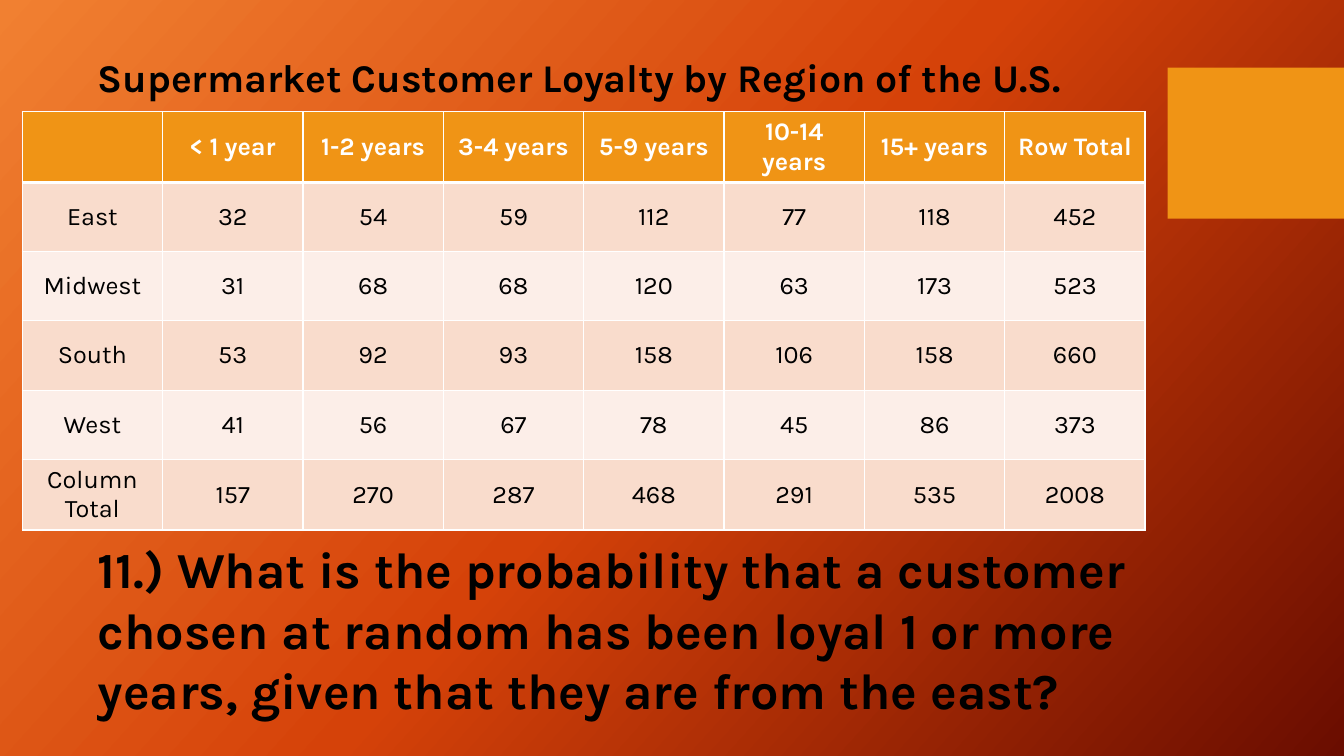
from copy import deepcopy
from dataclasses import dataclass

from lxml import etree
from pptx import Presentation
from pptx.dml.color import RGBColor
from pptx.enum import shapes, text
from pptx.oxml import ns
from pptx.slide import Slide
from pptx.table import _Cell
from pptx.text.text import _Paragraph
from pptx.util import Inches, Pt


@dataclass(frozen=True)
class Theme:
    font: str = "Karla"
    ink: str = "000000"
    white: str = "FFFFFF"
    accent: str = "F09415"
    bands: tuple[str, str] = ("F9DCCC", "FCEEE8")
    backdrop: tuple[str, str, str] = ("F18031", "D54209", "6A0D00")
    backdrop_angle: int = 42
    question_size: int = 36
    title_size: int = 28
    table_size: int = 18
    rule: int = 1
    header_rule: int = 3


@dataclass(frozen=True)
class Box:
    left: float
    top: float
    width: float
    height: float

    def emu(self) -> tuple[int, int, int, int]:
        return Inches(self.left), Inches(self.top), Inches(self.width), Inches(self.height)


@dataclass(frozen=True)
class Heading:
    words: str
    box: Box
    size: int


@dataclass(frozen=True)
class Region:
    name: str
    counts: tuple[int, ...]

    def labels(self) -> list[str]:
        return [self.name, *map(str, self.counts)]


THEME = Theme()
ACCENT_BOX = Box(11.58, 0.67, 1.75, 1.5)
LOYALTY_BOX = Box(0.22, 1.11, 11.14, 4.12)
HEADINGS = (
    Heading(
        "11.) What is the probability that a customer chosen at random has been "
        "loyal 1 or more years, given that they are from the east?",
        Box(0.87, 5.29, 11.29, 1.92),
        THEME.question_size,
    ),
    Heading(
        "Supermarket Customer Loyalty by Region of the U.S.",
        Box(0.87, 0.48, 10.39, 0.57),
        THEME.title_size,
    ),
)
PERIODS = ["", "< 1 year", "1-2 years", "3-4 years", "5-9 years",
           "10-14 years", "15+ years", "Row Total"]
REGIONS = (
    Region("East", (32, 54, 59, 112, 77, 118, 452)),
    Region("Midwest", (31, 68, 68, 120, 63, 173, 523)),
    Region("South", (53, 92, 93, 158, 106, 158, 660)),
    Region("West", (41, 56, 67, 78, 45, 86, 373)),
    Region("Column Total", (157, 270, 287, 468, 291, 535, 2008)),
)


def rgb(value: str) -> RGBColor:
    return RGBColor.from_string(value)


def add_run(paragraph: _Paragraph, words: str, size: int, color: str, bold: bool) -> None:
    run = paragraph.add_run()
    run.text = words
    run.font.name = THEME.font
    run.font.size = Pt(size)
    run.font.bold = bold
    run.font.color.rgb = rgb(color)


def paint_backdrop(slide: Slide) -> None:
    fill = slide.background.fill
    fill.gradient()
    fill.gradient_angle = 360 - THEME.backdrop_angle
    stop_list = next(slide.element.iter(ns.qn("a:gsLst")))
    stop_list.append(deepcopy(stop_list[-1]))
    for stop, color, position in zip(fill.gradient_stops, THEME.backdrop, (0, 0.5, 1)):
        stop.color.rgb = rgb(color)
        stop.position = position


def add_accent(slide: Slide) -> None:
    accent = slide.shapes.add_shape(shapes.MSO_SHAPE.RECTANGLE, *ACCENT_BOX.emu())
    accent.shadow.inherit = False
    accent.fill.solid()
    accent.fill.fore_color.rgb = rgb(THEME.accent)
    accent.line.fill.background()


def add_heading(slide: Slide, heading: Heading) -> None:
    frame = slide.shapes.add_textbox(*heading.box.emu()).text_frame
    frame.word_wrap = True
    frame.auto_size = text.MSO_AUTO_SIZE.SHAPE_TO_FIT_TEXT
    add_run(frame.paragraphs[0], heading.words, heading.size, THEME.ink, True)


def add_borders(cell: _Cell, top: int, bottom: int) -> None:
    properties = cell._tc.get_or_add_tcPr()
    widths = {"L": THEME.rule, "R": THEME.rule, "T": top, "B": bottom}
    for side, width in widths.items():
        line = etree.SubElement(properties, ns.qn(f"a:ln{side}"), w=str(Pt(width)))
        solid = etree.SubElement(line, ns.qn("a:solidFill"))
        etree.SubElement(solid, ns.qn("a:srgbClr"), val=THEME.white)


def fill_cell(cell: _Cell, words: str, row: int) -> None:
    header = row == 0
    add_borders(
        cell,
        THEME.header_rule if row == 1 else THEME.rule,
        THEME.header_rule if header else THEME.rule,
    )
    cell.fill.solid()
    cell.fill.fore_color.rgb = rgb(THEME.accent if header else THEME.bands[(row - 1) % 2])
    cell.vertical_anchor = text.MSO_ANCHOR.MIDDLE
    paragraph = cell.text_frame.paragraphs[0]
    paragraph.alignment = text.PP_ALIGN.CENTER
    if words:
        add_run(paragraph, words, THEME.table_size, THEME.white if header else THEME.ink, header)


def add_loyalty_table(slide: Slide) -> None:
    rows = [PERIODS, *(region.labels() for region in REGIONS)]
    table = slide.shapes.add_table(len(rows), len(PERIODS), *LOYALTY_BOX.emu()).table
    for row, labels in enumerate(rows):
        for column, words in enumerate(labels):
            fill_cell(table.cell(row, column), words, row)


def main() -> None:
    deck = Presentation()
    deck.slide_width = Inches(13.33)
    deck.slide_height = Inches(7.5)
    slide = deck.slides.add_slide(deck.slide_layouts[6])
    question, title = HEADINGS
    paint_backdrop(slide)
    add_accent(slide)
    add_heading(slide, question)
    add_loyalty_table(slide)
    add_heading(slide, title)
    deck.save("out.pptx")


if __name__ == "__main__":
    main()
